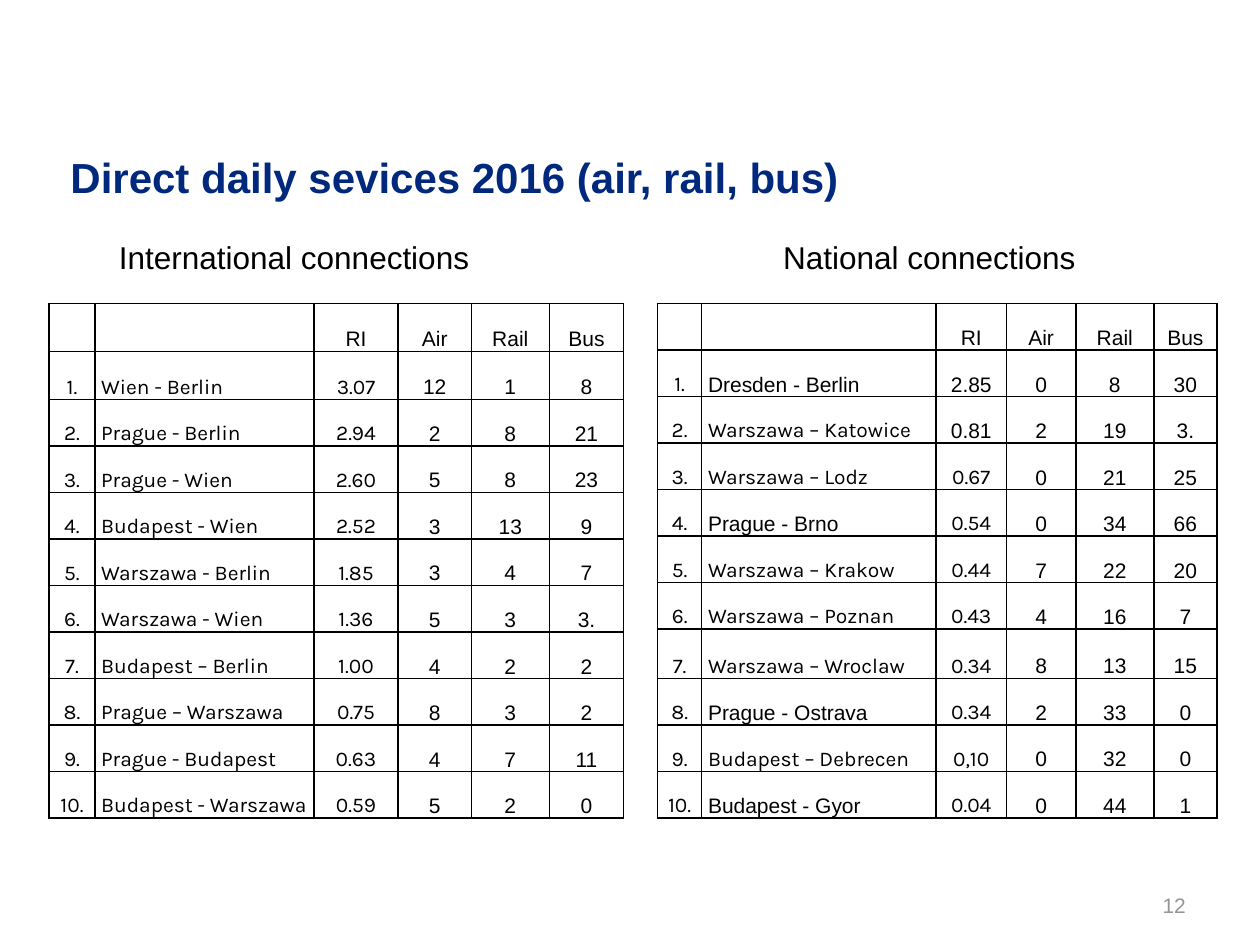
"""Build the slide on direct daily services in 2016."""
from lxml import etree
from pptx import Presentation
from pptx.dml.color import RGBColor
from pptx.enum.text import MSO_ANCHOR, PP_ALIGN
from pptx.oxml.ns import qn
from pptx.util import Pt

BOTTOM, TOP = MSO_ANCHOR.BOTTOM, MSO_ANCHOR.TOP
LEFT, MID, RIGHT = PP_ALIGN.LEFT, PP_ALIGN.CENTER, PP_ALIGN.RIGHT

TITLE = "Direct daily sevices 2016 (air, rail, bus)"
HEADS = "International connections\tNational connections"
PAGE = "12"
COLS = ("", "", "RI", "Air", "Rail", "Bus")
ABROAD = [
    ("Wien - Berlin", "3.07", "12", "1", "8"),
    ("Prague - Berlin", "2.94", "2", "8", "21"),
    ("Prague - Wien", "2.60", "5", "8", "23"),
    ("Budapest - Wien", "2.52", "3", "13", "9"),
    ("Warszawa - Berlin", "1.85", "3", "4", "7"),
    ("Warszawa - Wien", "1.36", "5", "3", "3."),
    ("Budapest – Berlin", "1.00", "4", "2", "2"),
    ("Prague – Warszawa", "0.75", "8", "3", "2"),
    ("Prague - Budapest", "0.63", "4", "7", "11"),
    ("Budapest - Warszawa", "0.59", "5", "2", "0"),
]
HOME = [
    ("Dresden - Berlin", "2.85", "0", "8", "30"),
    ("Warszawa – Katowice", "0.81", "2", "19", "3."),
    ("Warszawa – Lodz", "0.67", "0", "21", "25"),
    ("Prague - Brno", "0.54", "0", "34", "66"),
    ("Warszawa – Krakow", "0.44", "7", "22", "20"),
    ("Warszawa – Poznan", "0.43", "4", "16", "7"),
    ("Warszawa – Wroclaw", "0.34", "8", "13", "15"),
    ("Prague - Ostrava", "0.34", "2", "33", "0"),
    ("Budapest – Debrecen", "0,10", "0", "32", "0"),
    ("Budapest - Gyor", "0.04", "0", "44", "1"),
]
PLAIN = {"Dresden - Berlin", "Prague - Brno", "Prague - Ostrava",
         "Budapest - Gyor", "2.85", "0.81"}
GRIDS = [
    dict(rows=ABROAD, left=28.1, wide=(26.1, 125.2, 48.2, 41.8, 44.6, 42.5),
         tall={0: 27.4, 1: 27.4}),
    dict(rows=HOME, left=375.8, wide=(25.2, 133.9, 40.3, 39.6, 44.6, 36),
         tall={7: 28.1}),
]
GRID_TOP, ROW = 173.4, 26.6
THEME = dict(sans="Arial", alt="Karla", ink="000000", navy="00287D",
             grey="969696", big=24, head=18, small=12)


def style(para, size, ink, face="sans", bold=False):
    """Set the font of a paragraph from the theme."""
    font = para.font
    font.size, font.bold = Pt(THEME[size]), bold
    font.name = THEME[face]
    font.color.rgb = RGBColor.from_string(THEME[ink])


def add_text(slide, box, text, pads, anchor, align, look, tab=None):
    """Add a one-paragraph text box."""
    frame = slide.shapes.add_textbox(*map(Pt, box)).text_frame
    frame.word_wrap, frame.vertical_anchor = True, anchor
    (frame.margin_left, frame.margin_top,
     frame.margin_right, frame.margin_bottom) = map(Pt, pads)
    para = frame.paragraphs[0]
    para.text, para.alignment = text, align
    if tab:
        props = para._p.get_or_add_pPr()
        stops = etree.SubElement(props, qn("a:tabLst"))
        etree.SubElement(stops, qn("a:tab"), pos=str(Pt(tab)), algn="l")
    style(para, **look)


def add_edges(cell):
    """Draw thin lines on all four sides of a cell."""
    props = cell._tc.get_or_add_tcPr()
    for spot, side in enumerate("LRTB"):
        line = etree.Element(qn(f"a:ln{side}"), w=str(Pt(1)))
        fill = etree.SubElement(line, qn("a:solidFill"))
        etree.SubElement(fill, qn("a:srgbClr"), val=THEME["ink"])
        props.insert(spot, line)


def add_grid(slide, rows, left, wide, tall):
    """Add a numbered table of connections."""
    lines = [COLS] + [(f"{n}.", *row) for n, row in enumerate(rows, 1)]
    highs = [tall.get(n, ROW) for n in range(len(lines))]
    box = map(Pt, (left, GRID_TOP, sum(wide), sum(highs)))
    table = slide.shapes.add_table(len(lines), len(COLS), *box).table
    table.first_row = table.horz_banding = False
    for col, width in zip(table.columns, wide):
        col.width = Pt(width)
    for r, line in enumerate(lines):
        table.rows[r].height = Pt(highs[r])
        for c, text in enumerate(line):
            cell = table.cell(r, c)
            cell.fill.background()
            add_edges(cell)
            cell.vertical_anchor = BOTTOM
            cell.margin_left = cell.margin_right = Pt(3.6)
            cell.margin_top = cell.margin_bottom = 0
            para = cell.text_frame.paragraphs[0]
            para.text, para.line_spacing = text, 1.15
            para.alignment = LEFT if c == 1 else MID
            alt = r > 0 and c < 3 and text not in PLAIN
            style(para, "small", "ink", "alt" if alt else "sans")


def main():
    """Build and save the slide."""
    deck = Presentation()
    deck.slide_width, deck.slide_height = Pt(720), Pt(540)
    slide = deck.slides.add_slide(deck.slide_layouts[6])
    add_text(slide, (540, 491.8, 144.7, 36), PAGE, (7.2, 3.6, 7.2, 3.6),
             BOTTOM, RIGHT, dict(size="small", ink="grey"))
    add_text(slide, (41, 128.2, 636.5, 367.9), HEADS, (27, 7.5, 0, 0),
             TOP, LEFT, dict(size="head", ink="ink"), tab=379.5)
    for grid in GRIDS:
        add_grid(slide, **grid)
    add_text(slide, (40.3, 67.7, 636.5, 51.1), TITLE, (0, 3.6, 0, 3.6),
             BOTTOM, LEFT, dict(size="big", ink="navy", bold=True))
    deck.save("out.pptx")


if __name__ == "__main__":
    main()
